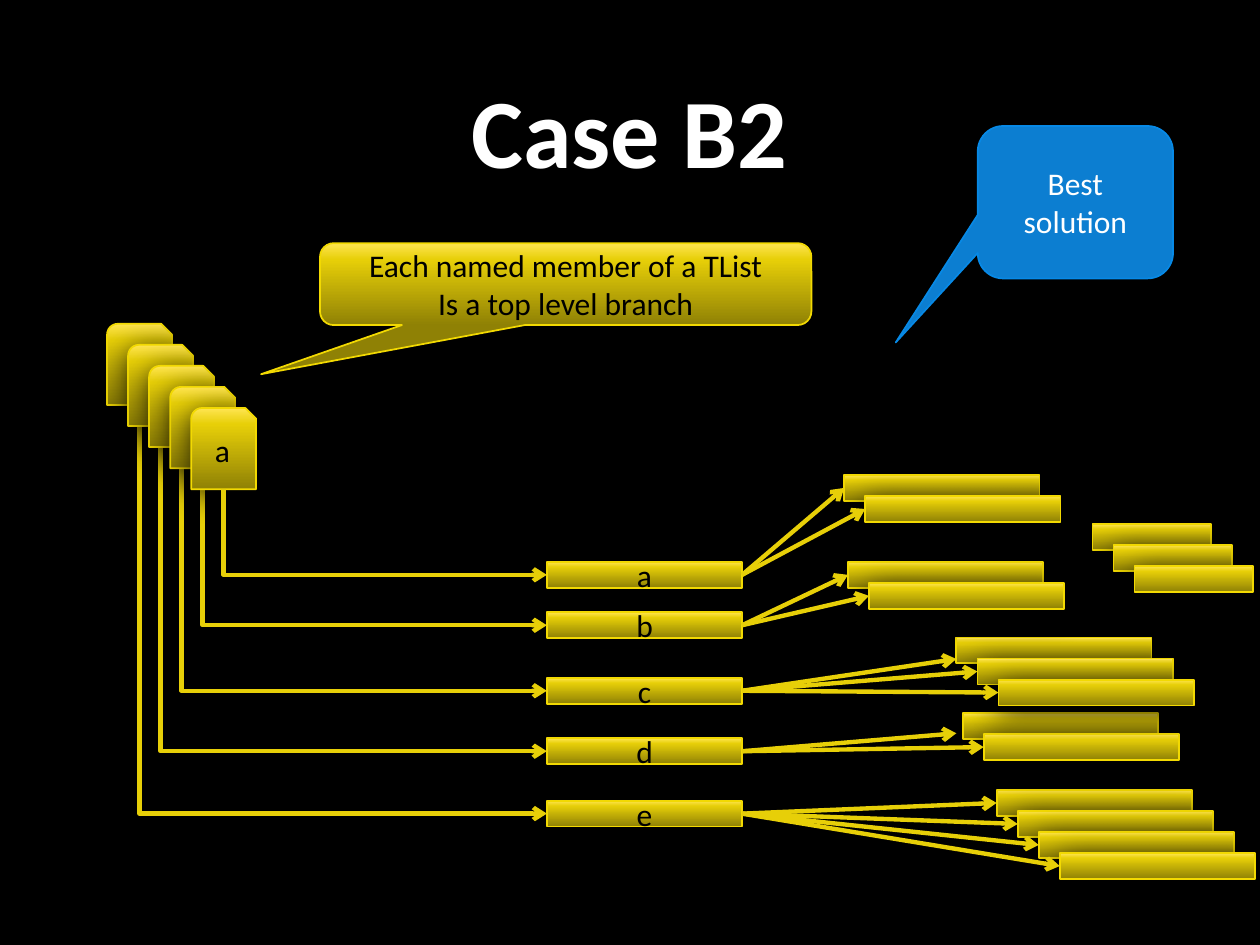
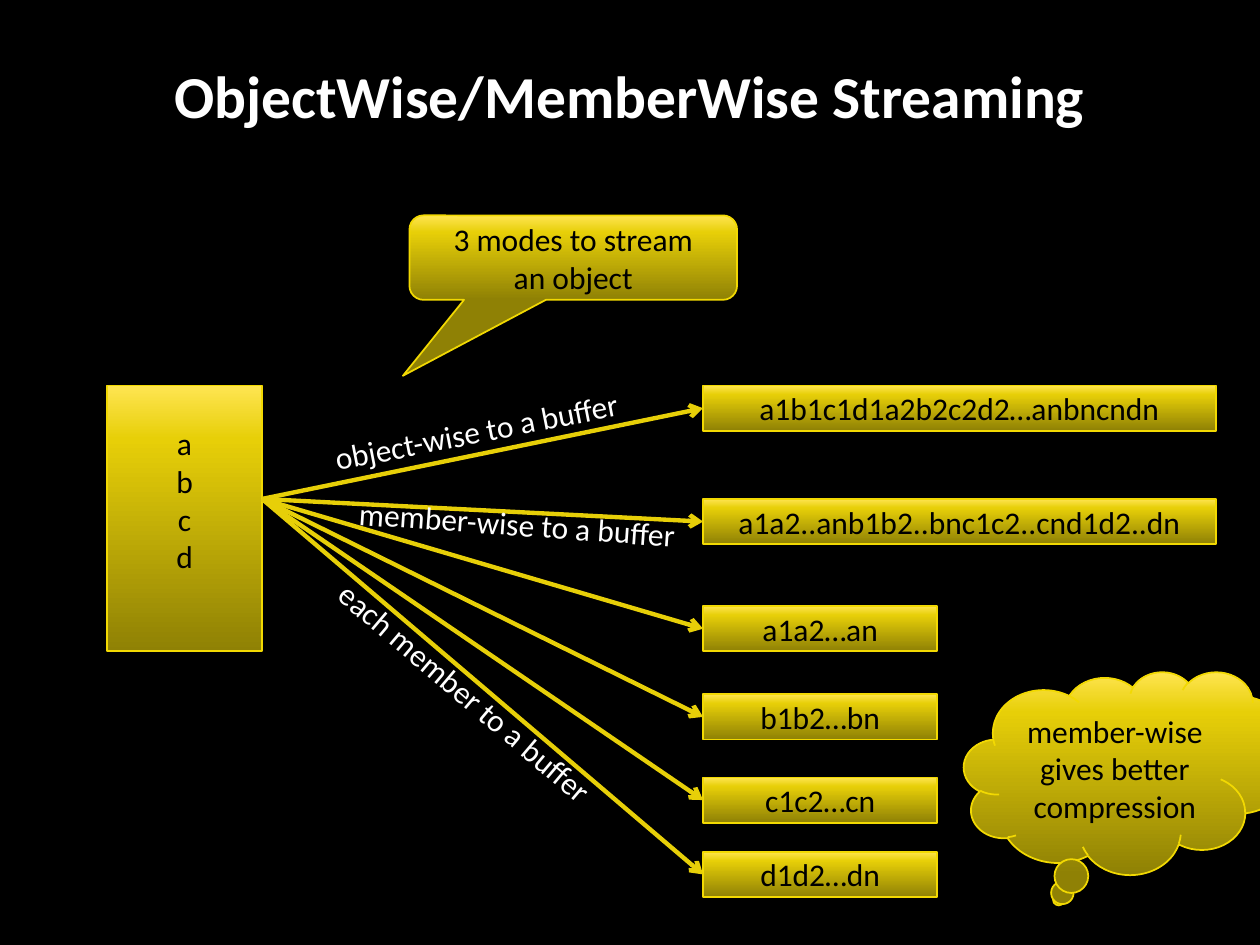
"""Two slides on splitting a list of objects into branches and buffers."""
from copy import deepcopy
from dataclasses import dataclass
from typing import Optional

from lxml import etree
from pptx import Presentation
from pptx import util as u
from pptx.dml import color
from pptx.enum import shapes, text
from pptx.oxml import ns

COLOURS = {"ground": "000000", "light": "FFFFFF", "dark": "000000",
           "low": "8F8105", "mid": "E7CF08", "high": "FFE552", "rim": "F2D902",
           "praise": "0C7ED1", "praise_rim": "0789E6"}
GOLD = (("low", 0), ("mid", 0.8), ("high", 1))
FONT = "Calibri"
COLUMNS, ROWS = 100, 75
CELL = u.Inches(0.1)
STEP = 1.67
BAR_HEIGHT = 2.05
BRANCH_LEFT, BRANCH_WIDTH = 43.4, 15.5
CARD_LEFT, CARD_TOP, CARD_WIDTH, CARD_HEIGHT = 8.5, 25.7, 5.15, 6.45
BUFFER_LEFT, BUFFER_HEIGHT = 55.8, 3.6
MARK = shapes.MSO_SHAPE
Point = tuple[float, float]


@dataclass(frozen=True)
class Area:
    left: float
    top: float
    width: float
    height: float


@dataclass(frozen=True)
class Node:
    area: Area
    lines: tuple[str, ...] = ()
    kind: MARK = MARK.RECTANGLE
    tail: tuple[float, ...] = ()
    praise: bool = False
    bottom_margin: float = 0.5


@dataclass(frozen=True)
class Basket:
    left: float
    top: float
    count: int
    branch: Optional[str] = None
    width: float = BRANCH_WIDTH
    first_tip: Optional[Point] = None

    def corners(self) -> list[Point]:
        return [(self.left + i * STEP, self.top + i * STEP) for i in range(self.count)]

    def tips(self) -> list[Point]:
        middles = [(x, y + BAR_HEIGHT / 2) for x, y in self.corners()]
        return [self.first_tip or middles[0], *middles[1:]]


@dataclass(frozen=True)
class Caption:
    area: Area
    words: str
    angle: float


BRANCH_TOPS = {"a": 44.6, "b": 48.6, "c": 53.8, "d": 58.6, "e": 63.55}
BASKETS = (
    Basket(79.1, 62.7, 4, "e"),
    Basket(76.4, 56.6, 2, "d", first_tip=(75.9, 58.2)),
    Basket(75.9, 50.6, 3, "c", first_tip=(75.9, 52.3)),
    Basket(67.3, 44.6, 2, "b"),
    Basket(86.7, 41.6, 3, width=9.4),
    Basket(67, 37.7, 2, "a"),
)
BRANCH_NOTES = (
    Node(Area(25.4, 19.3, 39, 6.5), ("Each named member of a TList", "Is a top level branch"),
         MARK.ROUNDED_RECTANGULAR_CALLOUT, (-0.62, 1.1)),
    Node(Area(77.6, 10, 15.5, 12.1), ("Best solution",),
         MARK.ROUNDED_RECTANGULAR_CALLOUT, (-0.92, 0.92), praise=True),
)
OBJECT = Node(Area(8.5, 30.6, 12.3, 21.1), tuple("abcd"), bottom_margin=3.5)
OBJECT_EXIT = (20.8, 39.6)
BUFFERS = (
    ("a1b1c1d1a2b2c2d2…anbncndn", 30.6, 40.7),
    ("a1a2..anb1b2..bnc1c2..cnd1d2..dn", 39.6, 40.7),
    ("a1a2…an", 48.1, 18.6),
    ("b1b2…bn", 55.1, 18.6),
    ("c1c2…cn", 61.7, 18.6),
    ("d1d2…dn", 67.6, 18.6),
)
MODES = (
    Caption(Area(25.4, 32.1, 25.9, 4), "object-wise to a buffer", 348.9),
    Caption(Area(27.5, 39.6, 28.2, 4), "member-wise to a buffer", 4),
    Caption(Area(23.2, 53.3, 28.3, 4), "each member to a buffer", 40.3),
)
STREAM_NOTES = (
    Node(Area(32.5, 17.1, 26, 6.7), ("3 modes to stream", "an object"),
         MARK.ROUNDED_RECTANGULAR_CALLOUT, (-0.52, 1.4)),
    Node(Area(76.5, 53.3, 25.8, 16.1), ("member-wise gives better compression",),
         MARK.CLOUD_CALLOUT),
)


def rgb(role: str) -> color.RGBColor:
    """Look up a colour by its role."""
    return color.RGBColor.from_string(COLOURS[role])


def cells(*counts: float) -> list[u.Emu]:
    """Turn grid cells into slide lengths."""
    return [u.Emu(round(count * CELL)) for count in counts]


def place(area: Area) -> list[u.Emu]:
    """Give the four lengths of an area."""
    return cells(area.left, area.top, area.width, area.height)


def write(frame, lines: tuple[str, ...], role: str, size: float = 18,
          bold: bool = False, align=text.PP_ALIGN.CENTER) -> None:
    """Write one paragraph for each line."""
    for i, line in enumerate(lines):
        paragraph = frame.add_paragraph() if i else frame.paragraphs[0]
        paragraph.alignment = align
        run = paragraph.add_run()
        run.text = line
        run.font.name, run.font.size, run.font.bold = FONT, u.Pt(size), bold
        run.font.color.rgb = rgb(role)


def gild(shape) -> None:
    """Give a shape the golden gradient and its soft shadow."""
    shape.fill.gradient()
    properties = shape._element.spPr
    stop_list = properties.find(".//" + ns.qn("a:gsLst"))
    stop_list.append(deepcopy(stop_list[0]))
    for stop, (role, position) in zip(shape.fill.gradient_stops, GOLD):
        stop.color.rgb = rgb(role)
        stop.position = position
    shape.fill.gradient_angle = 90
    shadow = etree.SubElement(
        properties.find(ns.qn("a:effectLst")), ns.qn("a:outerShdw"),
        blurRad=str(u.Pt(18)), dist=str(u.Pt(3)), dir="5400000", rotWithShape="0")
    tone = etree.SubElement(shadow, ns.qn("a:srgbClr"), val=COLOURS["dark"])
    etree.SubElement(tone, ns.qn("a:alpha"), val="80000")


def draw_node(slide, node: Node) -> None:
    """Draw a filled shape with its words."""
    shape = slide.shapes.add_shape(node.kind, *place(node.area))
    shape.shadow.inherit = False
    for i, value in enumerate(node.tail):
        shape.adjustments[i] = value
    shape.line.color.rgb = rgb("praise_rim" if node.praise else "rim")
    shape.line.width = u.Pt(1)
    if node.praise:
        shape.fill.solid()
        shape.fill.fore_color.rgb = rgb("praise")
    else:
        gild(shape)
    frame = shape.text_frame
    frame.word_wrap = True
    frame.vertical_anchor = text.MSO_ANCHOR.MIDDLE
    frame.margin_bottom = cells(node.bottom_margin)[0]
    write(frame, node.lines, "light" if node.praise else "dark")


def draw_arrow(slide, start: Point, end: Point, kind=shapes.MSO_CONNECTOR.STRAIGHT):
    """Draw a golden line with an open head at its end."""
    arrow = slide.shapes.add_connector(kind, *cells(*start, *end))
    arrow.line.color.rgb = rgb("mid")
    arrow.line.width = u.Pt(2.5)
    etree.SubElement(arrow.line._get_or_add_ln(), ns.qn("a:tailEnd"), type="arrow")
    etree.SubElement(arrow._element.spPr, ns.qn("a:effectLst"))
    return arrow


def draw_elbow(slide, start: Point, end: Point) -> None:
    """Draw an arrow that runs down and then right."""
    across, down = end[0] - start[0], end[1] - start[1]
    left = (start[0] + end[0] - down) / 2
    top = (start[1] + end[1] - across) / 2
    arrow = draw_arrow(slide, (left, top), (left + down, top + across),
                       shapes.MSO_CONNECTOR.ELBOW)
    properties = arrow._element.spPr
    properties.find(ns.qn("a:prstGeom")).set("prst", "bentConnector2")
    turn = properties.find(ns.qn("a:xfrm"))
    turn.set("rot", "16200000")
    turn.set("flipH", "1")


def draw_caption(slide, caption: Caption) -> None:
    """Draw a slanted label along an arrow."""
    label = slide.shapes.add_textbox(*place(caption.area))
    label.rotation = caption.angle
    label.text_frame.word_wrap = False
    label.text_frame.auto_size = text.MSO_AUTO_SIZE.SHAPE_TO_FIT_TEXT
    write(label.text_frame, (caption.words,), "light", align=text.PP_ALIGN.LEFT)


def start_slide(deck, title: str, size: float, height: float):
    """Add a dark slide with its title."""
    slide = deck.slides.add_slide(deck.slide_layouts[6])
    slide.background.fill.solid()
    slide.background.fill.fore_color.rgb = rgb("ground")
    heading = slide.shapes.add_textbox(*place(Area(8.5, 1.2, 82.9, height))).text_frame
    heading.word_wrap = True
    heading.vertical_anchor = text.MSO_ANCHOR.MIDDLE
    write(heading, (title,), "light", size, bold=True)
    return slide


def build_branches(deck) -> None:
    """Show list members feeding branches and their baskets."""
    slide = start_slide(deck, "Case B2", 56, 18.1)
    for name, top in BRANCH_TOPS.items():
        draw_node(slide, Node(Area(BRANCH_LEFT, top, BRANCH_WIDTH, BAR_HEIGHT), (name,)))
    for basket in BASKETS:
        for x, y in basket.corners():
            draw_node(slide, Node(Area(x, y, basket.width, BAR_HEIGHT)))
    for basket in BASKETS:
        if basket.branch:
            exit_point = (BRANCH_LEFT + BRANCH_WIDTH,
                          BRANCH_TOPS[basket.branch] + BAR_HEIGHT / 2)
            for tip in basket.tips():
                draw_arrow(slide, exit_point, tip)
    for i, (name, branch_top) in enumerate(reversed(BRANCH_TOPS.items())):
        left, top = CARD_LEFT + i * STEP, CARD_TOP + i * STEP
        front = i == len(BRANCH_TOPS) - 1
        draw_node(slide, Node(Area(left, top, CARD_WIDTH, CARD_HEIGHT),
                              (name,) if front else (), MARK.SNIP_ROUND_RECTANGLE))
        draw_elbow(slide, (left + CARD_WIDTH / 2, top + CARD_HEIGHT),
                   (BRANCH_LEFT, branch_top + BAR_HEIGHT / 2))
    for note in BRANCH_NOTES:
        draw_node(slide, note)


def build_streaming(deck) -> None:
    """Show the ways in which an object reaches its buffers."""
    slide = start_slide(deck, "ObjectWise/MemberWise Streaming", 34, 12.6)
    draw_node(slide, OBJECT)
    for content, top, width in BUFFERS:
        draw_node(slide, Node(Area(BUFFER_LEFT, top, width, BUFFER_HEIGHT), (content,)))
    for _, top, _ in BUFFERS:
        draw_arrow(slide, OBJECT_EXIT, (BUFFER_LEFT, top + BUFFER_HEIGHT / 2))
    callout, cloud = STREAM_NOTES
    draw_node(slide, callout)
    for mode in MODES:
        draw_caption(slide, mode)
    draw_node(slide, cloud)


def main() -> None:
    """Build and save the deck."""
    deck = Presentation()
    deck.slide_width, deck.slide_height = cells(COLUMNS, ROWS)
    build_branches(deck)
    build_streaming(deck)
    deck.save("out.pptx")


if __name__ == "__main__":
    main()
